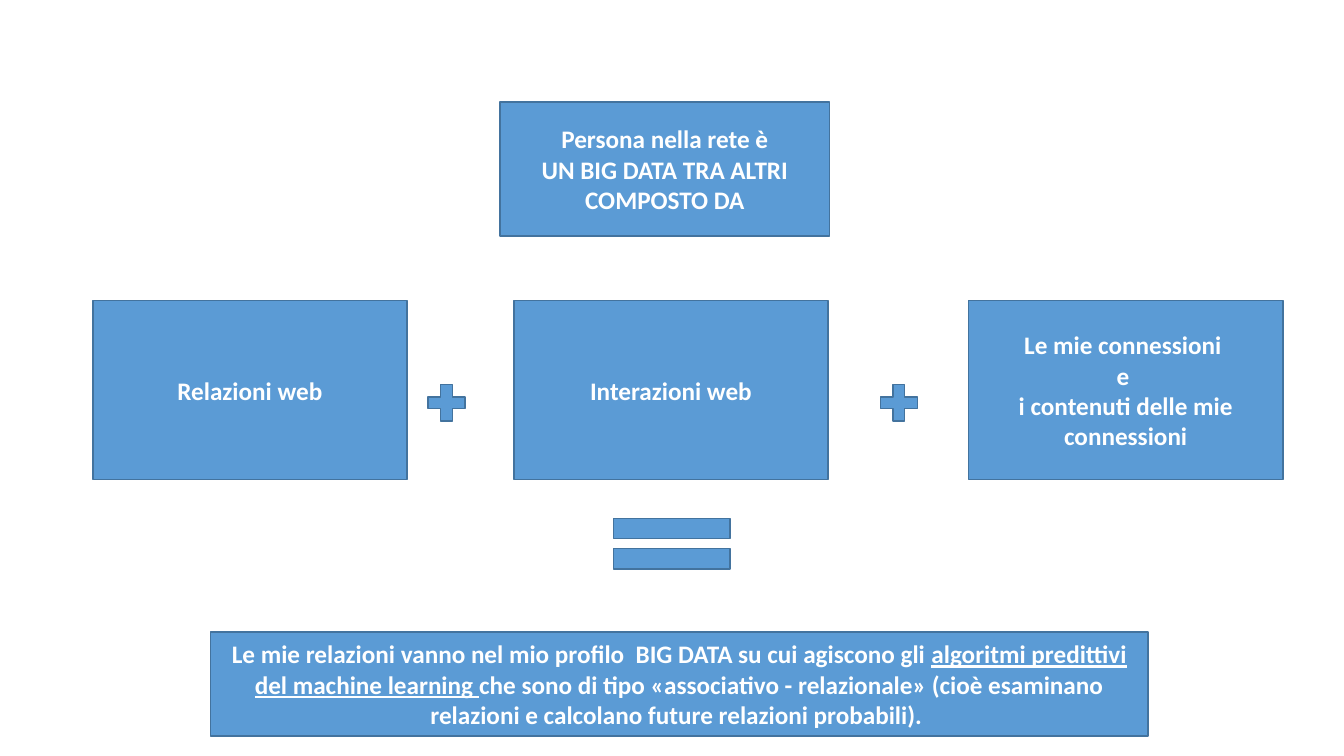
"""Build a slide that sums up a person on the web as big data."""
from pptx import Presentation
from pptx.dml.color import RGBColor as Rgb
from pptx.enum.shapes import MSO_SHAPE as Kind
from pptx.enum.text import MSO_ANCHOR as Anchor, PP_ALIGN as Align
from pptx.util import Cm, Pt

HUES = {"fill": "5B9BD5", "edge": "43739E", "text": "FFFFFF"}


def write(para, text, size=18, bold=True, under=False, hue="text", face="Calibri"):
    run = para.add_run()
    run.text = text
    font = run.font
    font.name, font.size = face, Pt(size)
    font.bold, font.underline = bold, under
    font.color.rgb = Rgb.from_string(HUES[hue])


class Board:
    def __init__(self, slide, edge=1):
        self.slide = slide
        self.edge = edge

    def sign(self, kind, left, top, wide, high):
        item = self.slide.shapes.add_shape(kind, Cm(left), Cm(top), Cm(wide), Cm(high))
        item.shadow.inherit = False
        item.fill.solid()
        item.fill.fore_color.rgb = Rgb.from_string(HUES["fill"])
        item.line.color.rgb = Rgb.from_string(HUES["edge"])
        item.line.width = Pt(self.edge)
        return item

    def box(self, left, top, wide, high, lines):
        item = self.sign(Kind.FLOWCHART_PROCESS, left, top, wide, high)
        frame = item.text_frame
        frame.word_wrap = True
        frame.vertical_anchor = Anchor.MIDDLE
        for num, line in enumerate(lines):
            para = frame.add_paragraph() if num else frame.paragraphs[0]
            para.alignment = Align.CENTER
            for text, under in line:
                write(para, text, under=under)


def plain(*lines):
    return [[(line, False)] for line in lines]


def main():
    deck = Presentation()
    deck.slide_width, deck.slide_height = Cm(33.87), Cm(19.05)
    board = Board(deck.slides.add_slide(deck.slide_layouts[6]))

    board.box(12.6, 2.57, 8.31, 3.38, plain(
        "Persona nella rete è", "UN BIG DATA TRA ALTRI", "COMPOSTO DA"))

    parts = [
        (2.34, plain("Relazioni web")),
        (12.95, plain("Interazioni web")),
        (24.41, plain("Le mie connessioni ", "e ",
                      "i contenuti delle mie connessioni")),
    ]
    for left, lines in parts:
        board.box(left, 7.57, 7.92, 4.52, lines)

    board.sign(Kind.MATH_EQUAL, 14.94, 12.62, 3.99, 2.16)
    for left in (22.02, 10.62):
        board.sign(Kind.MATH_PLUS, left, 9.53, 1.27, 1.24)

    board.box(5.31, 15.93, 23.62, 2.62, [[
        ("Le mie relazioni vanno nel mio profilo  BIG DATA su cui agiscono gli ", False),
        ("algoritmi predittivi del machine learning ", True),
        ("che sono di tipo «associativo - relazionale» (cioè esaminano "
         "relazioni e calcolano future relazioni probabili). ", False),
    ]])
    deck.save("out.pptx")


if __name__ == "__main__":
    main()
